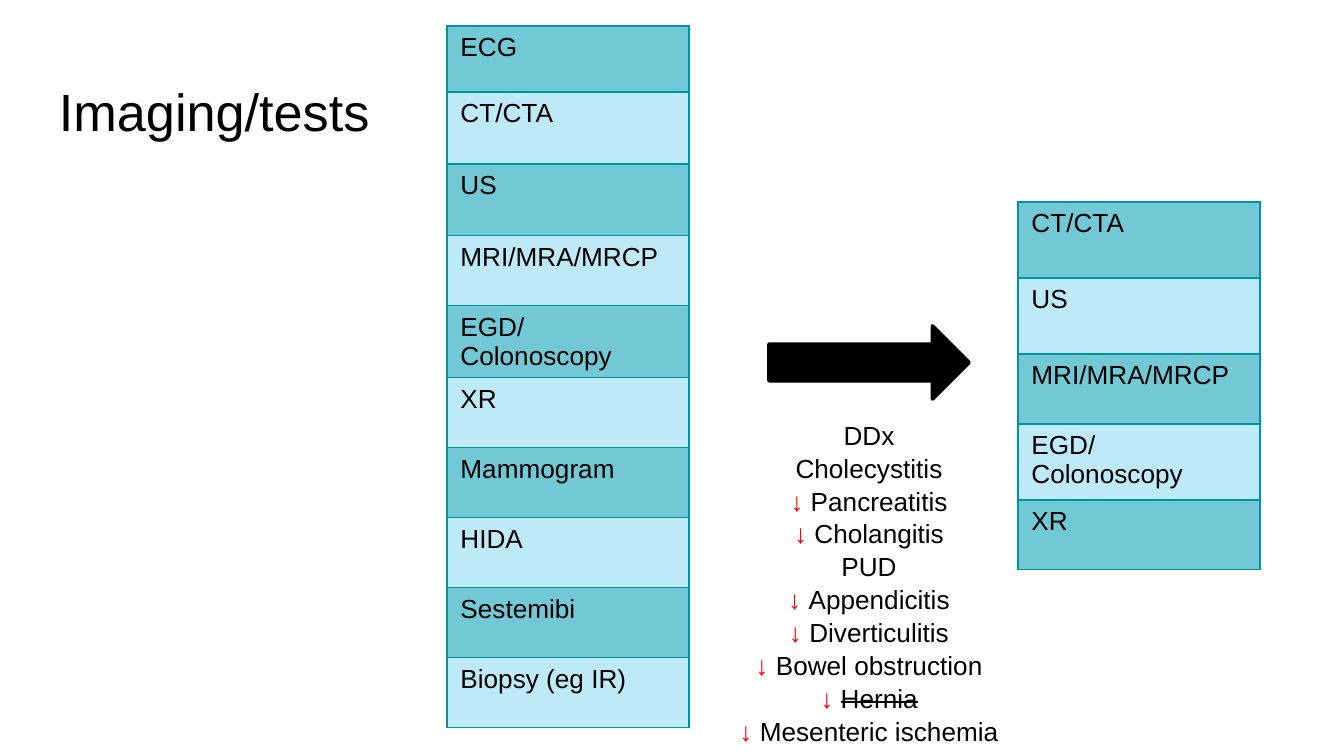
from lxml import etree
from pptx import Presentation
from pptx.dml.color import RGBColor
from pptx.enum.shapes import MSO_SHAPE
from pptx.enum.text import MSO_ANCHOR, MSO_AUTO_SIZE, PP_ALIGN
from pptx.oxml.ns import qn
from pptx.util import Pt

ARROW = MSO_SHAPE.RIGHT_ARROW
TOP = MSO_ANCHOR.TOP
NO_FIT = MSO_AUTO_SIZE.NONE
LEFT, CENTER = PP_ALIGN.LEFT, PP_ALIGN.CENTER

SCALE = 9144000 / 1344  # EMU per px
COLORS = {
    "ink": "000000",
    "paper": "FFFFFF",
    "dark": "72C9D5",
    "light": "BEE9F6",
    "edge": "0094A3",
    "mark": "FF0000",
}
FONT = "Arial"
SIZE = 14

TESTS = [
    ("ECG", 66), ("CT/CTA", 72), ("US", 72), ("MRI/MRA/MRCP", 70),
    ("EGD/Colonoscopy", 72), ("XR", 70), ("Mammogram", 70), ("HIDA", 70),
    ("Sestemibi", 70), ("Biopsy (eg IR)", 70),
]
CHOSEN = [
    ("CT/CTA", 76), ("US", 76), ("MRI/MRA/MRCP", 70),
    ("EGD/Colonoscopy", 76), ("XR", 70),
]
CAUSES = [
    "DDx", "Cholecystitis", "Pancreatitis", "Cholangitis", "PUD",
    "Appendicitis", "Diverticulitis", "Bowel obstruction", "Hernia",
    "Mesenteric ischemia",
]
PLAIN = {"DDx", "Cholecystitis", "PUD"}
STRUCK = {"Hernia"}


def px(n):
    return round(n * SCALE)


def rgb(name):
    return RGBColor.from_string(COLORS[name])


class Deck:
    def __init__(self):
        self.prs = Presentation()
        self.prs.slide_width, self.prs.slide_height = px(1344), px(756)
        self.slide = self.prs.slides.add_slide(self.prs.slide_layouts[5])

    def style(self, font, size=SIZE, color="ink"):
        font.name, font.size = FONT, Pt(size)
        font.color.rgb = rgb(color)

    def title(self, text, x, y, w, h):
        shape = self.slide.shapes.title
        shape.left, shape.top, shape.width, shape.height = map(px, (x, y, w, h))
        frame = shape.text_frame
        frame.text = text
        frame.auto_size, frame.vertical_anchor = NO_FIT, TOP
        frame.margin_left = frame.margin_right = px(13)
        frame.margin_top = frame.margin_bottom = px(13)
        para = frame.paragraphs[0]
        para.alignment = LEFT
        self.style(para.font, 28)

    def border(self, cell):
        props = cell._tc.get_or_add_tcPr()
        for i, side in enumerate(("lnL", "lnR", "lnT", "lnB")):
            line = etree.Element(qn("a:" + side), w=str(Pt(0.75)))
            fill = etree.SubElement(line, qn("a:solidFill"))
            etree.SubElement(fill, qn("a:srgbClr"), val=COLORS["edge"])
            props.insert(i, line)

    def table(self, rows, x, y, w):
        """Draw a one-column table from (text, height) rows."""
        total = sum(h for _, h in rows)
        grid = self.slide.shapes.add_table(
            len(rows), 1, px(x), px(y), px(w), px(total)).table
        grid.first_row = grid.horz_banding = False
        for i, (text, h) in enumerate(rows):
            grid.rows[i].height = px(h)
            cell = grid.cell(i, 0)
            cell.text = text
            cell.margin_bottom = px(4)
            cell.fill.solid()
            cell.fill.fore_color.rgb = rgb("light" if i % 2 else "dark")
            self.style(cell.text_frame.paragraphs[0].font)
            self.border(cell)

    def arrow(self, x, y, w, h):
        shape = self.slide.shapes.add_shape(ARROW, *map(px, (x, y, w, h)))
        shape.shadow.inherit = False
        shape.fill.solid()
        shape.fill.fore_color.rgb = rgb("ink")
        shape.line.color.rgb = rgb("ink")
        shape.line.width = Pt(2)

    def causes(self, names, x, y, w, h):
        """Draw the centred list, with a red arrow before each ruled-down name."""
        box = self.slide.shapes.add_textbox(*map(px, (x, y, w, h)))
        box.fill.solid()
        box.fill.fore_color.rgb = rgb("paper")
        frame = box.text_frame
        frame.word_wrap = False
        for i, name in enumerate(names):
            para = frame.add_paragraph() if i else frame.paragraphs[0]
            para.alignment, para.line_spacing = CENTER, 1.05
            self.style(para.font)
            if name not in PLAIN:
                mark = para.add_run()
                mark.text = "↓ "
                mark.font.bold = True
                self.style(mark.font, color="mark")
            run = para.add_run()
            run.text = name
            self.style(run.font)
            if name in STRUCK:
                run._r.get_or_add_rPr().set("strike", "sngStrike")


def main():
    deck = Deck()
    deck.title("Imaging/tests", 46, 66, 1252, 84)
    deck.table(TESTS, 447, 26, 242)
    deck.arrow(769, 326, 200, 73)
    deck.causes(CAUSES, 725, 411, 288, 331)
    deck.table(CHOSEN, 1018, 202, 242)
    deck.prs.save("out.pptx")


if __name__ == "__main__":
    main()
